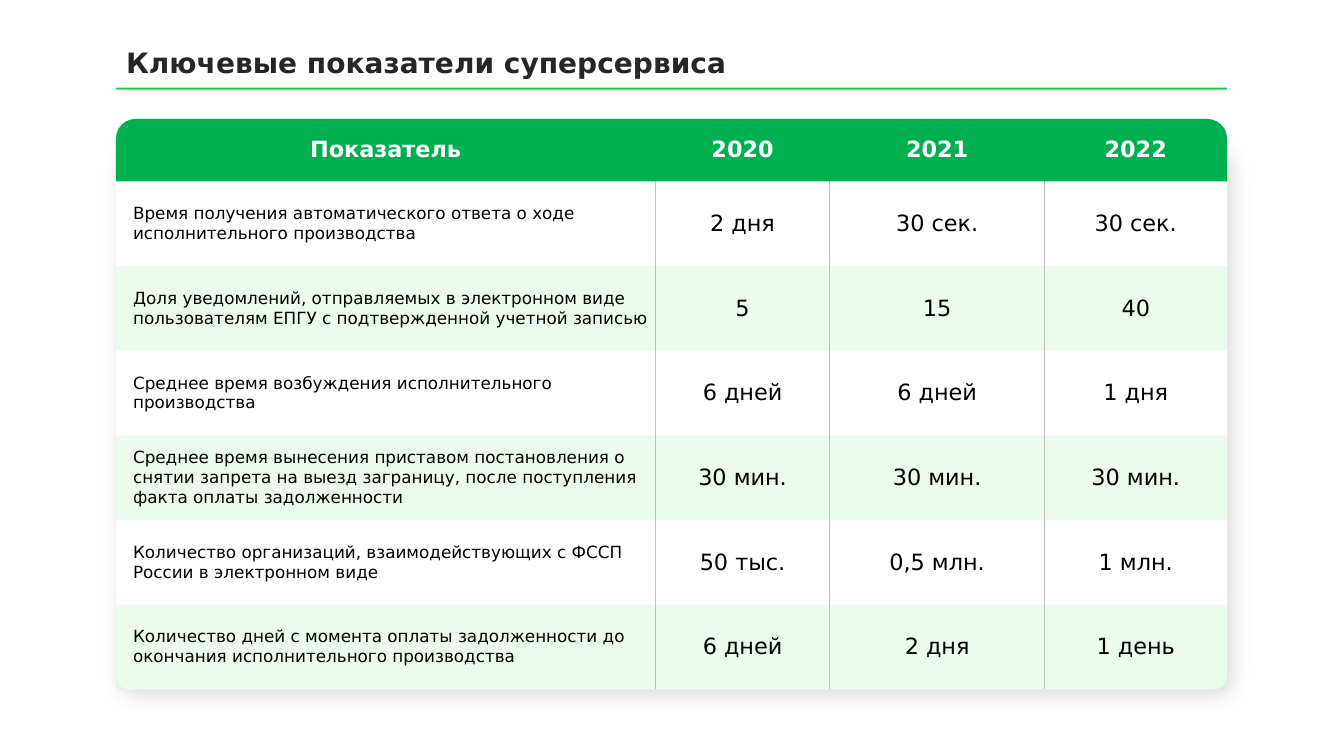
from lxml import etree
from pptx import Presentation
from pptx.dml.color import RGBColor
from pptx.enum.shapes import MSO_SHAPE as SHAPE
from pptx.enum.text import MSO_ANCHOR as ANCHOR, PP_ALIGN as ALIGN
from pptx.oxml import parse_xml
from pptx.oxml.ns import nsdecls, qn
from pptx.util import Inches, Pt

FONT = "DejaVu Sans"
WHITE = RGBColor(0xFF, 0xFF, 0xFF)
BLACK = RGBColor(0, 0, 0)
DARK = RGBColor(0x26, 0x26, 0x26)
GREEN = RGBColor(0, 0xB0, 0x50)
LIME = RGBColor(0x1C, 0xD2, 0x47)
MINT = RGBColor(0xCF, 0xF9, 0xD9)
GREY = RGBColor(0xBF, 0xBF, 0xBF)
PLAIN = "{2D5ABB26-0587-4C30-8999-92F81FD0307C}"  # no style, no grid

# Grid in inches
LEFT, TOP = 1.15, 1.18
COLS = [5.35, 1.73, 2.13, 1.81]
WIDTH = sum(COLS)
HEAD, ROW = 0.62, 0.84

HEADS = ["Показатель", "2020", "2021", "2022"]
ROWS = [
    ["Время получения автоматического ответа о ходе исполнительного производства",
     "2 дня", "30 сек.", "30 сек."],
    ["Доля уведомлений, отправляемых в электронном виде пользователям ЕПГУ "
     "с подтвержденной учетной записью", "5", "15", "40"],
    ["Среднее время возбуждения исполнительного производства",
     "6 дней", "6 дней", "1 дня"],
    ["Среднее время вынесения приставом постановления о снятии запрета на выезд "
     "заграницу, после поступления факта оплаты задолженности",
     "30 мин.", "30 мин.", "30 мин."],
    ["Количество организаций, взаимодействующих с ФССП России в электронном виде",
     "50 тыс.", "0,5 млн.", "1 млн."],
    ["Количество дней с момента оплаты задолженности до окончания "
     "исполнительного производства", "6 дней", "2 дня", "1 день"],
]

prs = Presentation()
prs.slide_width, prs.slide_height = Inches(13.33), Inches(7.5)
slide = prs.slides.add_slide(prs.slide_layouts[5])
shapes = slide.shapes


def add_box(kind, top, height, color):
    box = shapes.add_shape(kind, Inches(LEFT), Inches(top), Inches(WIDTH), Inches(height))
    box.shadow.inherit = False
    box.fill.solid()
    box.fill.fore_color.rgb = color
    box.line.fill.background()
    return box


def add_grid(top, height, rows, size, color, bold):
    grid = shapes.add_table(len(rows), len(COLS), Inches(LEFT), Inches(top),
                            Inches(WIDTH), Inches(height * len(rows))).table
    grid.first_row = grid.horz_banding = False
    grid._tbl.tblPr.find(qn("a:tableStyleId")).text = PLAIN
    for col, width in zip(grid.columns, COLS):
        col.width = Inches(width)
    for r, texts in enumerate(rows):
        grid.rows[r].height = Inches(height)
        for c, text in enumerate(texts):
            cell = grid.cell(r, c)
            cell.vertical_anchor = ANCHOR.MIDDLE
            cell.margin_left = cell.margin_right = Inches(0.07)
            cell.margin_top = cell.margin_bottom = 0
            cell.fill.background()
            para = cell.text_frame.paragraphs[0]
            para.alignment = ALIGN.CENTER
            run = para.add_run()
            run.text = text
            run.font.name, run.font.size = FONT, Pt(size)
            run.font.bold, run.font.color.rgb = bold, color
    return grid


# Title and rule
title = shapes.title
title.left, title.top = Inches(LEFT), Inches(0.43)
title.width, title.height = Inches(WIDTH), Inches(0.41)
frame = title.text_frame
frame.word_wrap = True
frame.vertical_anchor = ANCHOR.BOTTOM
para = frame.paragraphs[0]
para.alignment = ALIGN.LEFT
para.line_spacing = 0.9
run = para.add_run()
run.text = "Ключевые показатели суперсервиса"
run.font.name, run.font.size = FONT, Pt(20)
run.font.bold, run.font.color.rgb = True, DARK
add_box(SHAPE.RECTANGLE, 0.87, 0.02, LIME)

# Card with a soft shadow
card = add_box(SHAPE.ROUNDED_RECTANGLE, 1.47, 5.37, WHITE)
card.adjustments[0] = 0.025
glow = etree.SubElement(card._element.spPr.find(qn("a:effectLst")), qn("a:outerShdw"),
                        blurRad=str(Pt(16)), dist=str(Pt(5)), dir=str(45 * 60000),
                        algn="tl", rotWithShape="0")
tint = etree.SubElement(glow, qn("a:srgbClr"), val=str(BLACK))
etree.SubElement(tint, qn("a:alpha"), val="15000")

# Body: left-aligned labels, column lines, mint on every second row
body = add_grid(TOP + HEAD, ROW, ROWS, 16, BLACK, False)
for r in range(len(ROWS)):
    label = body.cell(r, 0)
    label.margin_left = label.margin_right = Inches(0.01)
    para = label.text_frame.paragraphs[0]
    para.alignment = ALIGN.LEFT
    para._p.get_or_add_pPr().set("marL", str(Inches(0.16)))
    para.runs[0].font.size = Pt(12)
    for c in range(len(COLS)):
        cell = body.cell(r, c)
        props = cell._tc.get_or_add_tcPr()
        sides = ["lnL"] * (c > 0) + ["lnR"] * (c < len(COLS) - 1)
        for spot, side in enumerate(sides):
            props.insert(spot, parse_xml(
                f'<a:{side} {nsdecls("a")} w="{Pt(0.5)}"><a:solidFill>'
                f'<a:srgbClr val="{GREY}"/></a:solidFill></a:{side}>'))
        if r % 2:
            cell.fill.solid()
            cell.fill.fore_color.rgb = MINT
            tint = props.find(qn("a:solidFill")).find(qn("a:srgbClr"))
            etree.SubElement(tint, qn("a:alpha"), val="40000")

# Header: rounded band under a one-row table
band = add_box(SHAPE.ROUND_2_SAME_RECTANGLE, TOP, HEAD, GREEN)
band.adjustments[0] = 0.313
add_grid(TOP, HEAD, [HEADS], 16, WHITE, True)

prs.save("out.pptx")
